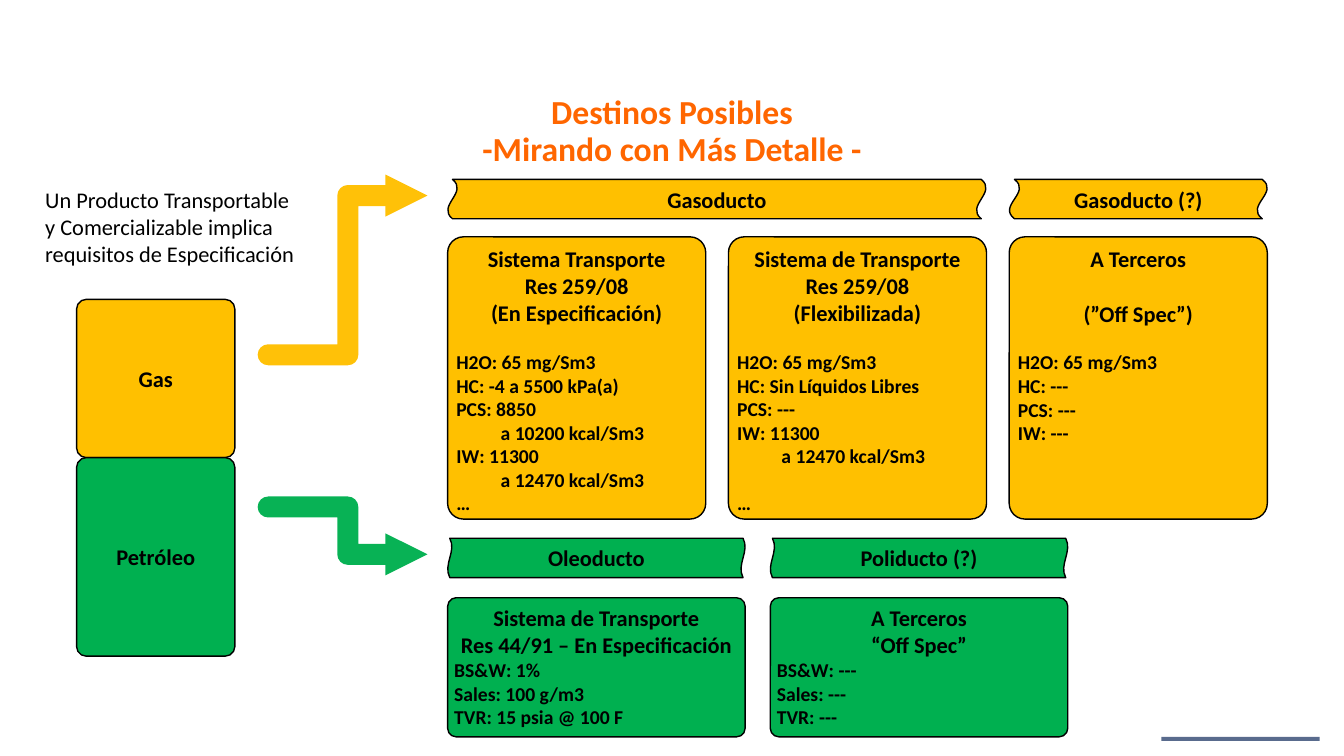
from dataclasses import dataclass
from typing import NamedTuple

from lxml.etree import SubElement as Sub
from pptx import Presentation
from pptx.dml.color import RGBColor as Rgb
from pptx.enum.shapes import MSO_CONNECTOR as Conn, MSO_SHAPE as Kind
from pptx.enum.text import MSO_ANCHOR as Anchor, PP_ALIGN as Align
from pptx.oxml.ns import qn
from pptx.util import Inches, Pt


@dataclass(frozen=True)
class Theme:
    font: str = "Calibri"
    gas: str = "FFC000"
    oil: str = "00B050"
    ink: str = "000000"
    title: str = "FF6600"
    bar: str = "001C50"
    big: int = 24
    head: int = 16
    body: int = 14


class Line(NamedTuple):
    text: str
    gap: float = 0
    indent: float = 0


@dataclass(frozen=True)
class Box:
    x: float
    y: float
    w: float
    h: float
    fill: str
    heads: tuple[Line, ...]
    rows: tuple[Line, ...] = ()


@dataclass(frozen=True)
class Band:
    x: float
    y: float
    w: float
    fill: str
    text: str
    wave: float


@dataclass(frozen=True)
class Arrow:
    y: float
    end: float
    fill: str


theme = Theme()
GAP, TAB, BAND, PAD = 17, 0.44, 0.39, 0.04
GAS_X = [4.44 + 2.785 * i for i in range(3)]
OIL_X = [4.44 + 3.2 * i for i in range(2)]
GAS = (2.35, 2.56, 2.8, theme.gas)
OIL = (5.93, 2.95, 1.38, theme.oil)

BOXES = [
    Box(0.76, 2.97, 1.57, 1.57, theme.gas, (Line("Gas"),)),
    Box(0.76, 4.54, 1.57, 1.97, theme.oil, (Line("Petróleo"),)),
    Box(GAS_X[0], *GAS,
        (Line("Sistema Transporte"), Line("Res 259/08"), Line("(En Especificación)")),
        (Line("H2O: 65 mg/Sm3", GAP), Line("HC: -4 a 5500 kPa(a)"),
         Line("PCS: 8850"), Line("a 10200 kcal/Sm3", indent=TAB),
         Line("IW: 11300"), Line("a 12470 kcal/Sm3", indent=TAB), Line("…"))),
    Box(GAS_X[1], *GAS,
        (Line("Sistema de Transporte"), Line("Res 259/08"), Line("(Flexibilizada)")),
        (Line("H2O: 65 mg/Sm3", GAP), Line("HC: Sin Líquidos Libres"),
         Line("PCS: ---"), Line("IW: 11300"),
         Line("a 12470 kcal/Sm3", indent=TAB), Line("…", GAP))),
    Box(GAS_X[2], *GAS,
        (Line("A Terceros"), Line("(”Off Spec”)", 19.5)),
        (Line("H2O: 65 mg/Sm3", GAP), Line("HC: ---"), Line("PCS: ---"), Line("IW: ---"))),
    Box(OIL_X[0], *OIL,
        (Line("Sistema de Transporte"), Line("Res 44/91 – En Especificación")),
        (Line("BS&W: 1%"), Line("Sales: 100 g/m3"), Line("TVR: 15 psia @ 100 F"))),
    Box(OIL_X[1], *OIL,
        (Line("A Terceros"), Line("“Off Spec”")),
        (Line("BS&W: ---"), Line("Sales: ---"), Line("TVR: ---"))),
]
BANDS = [
    Band(GAS_X[0], 1.78, 5.34, theme.gas, "Gasoducto", 0.009),
    Band(GAS_X[2], 1.78, 2.56, theme.gas, "Gasoducto (?)", 0.02),
    Band(OIL_X[0], 5.34, 2.95, theme.oil, "Oleoducto", 0.007),
    Band(OIL_X[1], 5.34, 2.95, theme.oil, "Poliducto (?)", 0.007),
]
ARROWS = [Arrow(3.52, 1.94, theme.gas), Arrow(5.03, 5.5, theme.oil)]


def style(para, size: int, color: str = theme.ink, bold: bool = True) -> None:
    for run in para.runs:
        run.font.name = theme.font
        run.font.size = Pt(size)
        run.font.bold = bold
        run.font.color.rgb = Rgb.from_string(color)


def fade(fill, share: int) -> None:
    color = next(fill.iter(qn("a:srgbClr")))
    Sub(color, qn("a:alpha"), val=str(share * 1000))


def block(slide, kind, x: float, y: float, w: float, h: float, fill: str):
    shape = slide.shapes.add_shape(kind, Inches(x), Inches(y), Inches(w), Inches(h))
    shape.shadow.inherit = False
    shape.fill.solid()
    shape.fill.fore_color.rgb = Rgb.from_string(fill)
    shape.line.color.rgb = Rgb.from_string(theme.ink)
    shape.line.width = Pt(1)
    frame = shape.text_frame
    frame.word_wrap = True
    frame.margin_left = frame.margin_right = Inches(PAD)
    frame.margin_top = frame.margin_bottom = Inches(PAD)
    frame.vertical_anchor = Anchor.MIDDLE
    return shape


def draw_box(slide, box: Box) -> None:
    shape = block(slide, Kind.ROUNDED_RECTANGLE, box.x, box.y, box.w, box.h, box.fill)
    shape.adjustments[0] = 0.061
    frame = shape.text_frame
    if box.rows:
        frame.vertical_anchor = Anchor.TOP
    lines = box.heads + box.rows
    frame.text = "\n".join(line.text for line in lines)
    for i, (para, line) in enumerate(zip(frame.paragraphs, lines)):
        head = i < len(box.heads)
        para.alignment = Align.CENTER if head else Align.LEFT
        if line.gap:
            para.space_before = Pt(line.gap)
        if line.indent:
            para._p.get_or_add_pPr().set("marL", str(Inches(line.indent)))
        style(para, theme.head if head else theme.body)


def draw_band(slide, band: Band) -> None:
    shift = (band.w - BAND) / 2
    shape = block(slide, Kind.WAVE, band.x + shift, band.y - shift, BAND, band.w, band.fill)
    shape.rotation = 90
    shape.adjustments[0] = band.wave
    shape.adjustments[1] = 0
    frame = shape.text_frame
    frame._txBody.bodyPr.set("vert", "vert270")
    frame.text = band.text
    frame.paragraphs[0].alignment = Align.CENTER
    style(frame.paragraphs[0], theme.head)


def draw_arrow(slide, arrow: Arrow) -> None:
    link = slide.shapes.add_connector(
        Conn.ELBOW, Inches(2.66), Inches(arrow.y), Inches(4.24), Inches(arrow.end))
    link.line.color.rgb = Rgb.from_string(arrow.fill)
    link.line.width = Pt(15)
    props = link._element.spPr
    line = props.find(qn("a:ln"))
    fade(line, 96)
    line.set("cap", "rnd")
    Sub(line, qn("a:round"))
    Sub(line, qn("a:tailEnd"), type="triangle", w="sm", len="sm")
    Sub(props, qn("a:effectLst"))


def draw_text(slide, x: float, y: float, w: float, h: float, text: str):
    frame = slide.shapes.add_textbox(Inches(x), Inches(y), Inches(w), Inches(h)).text_frame
    frame.word_wrap = True
    frame.text = text
    return frame


def main() -> None:
    deck = Presentation()
    deck.slide_width, deck.slide_height = Inches(13.33), Inches(7.5)
    slide = deck.slides.add_slide(deck.slide_layouts[6])

    bar = block(slide, Kind.RECTANGLE, 11.52, 7.31, 1.57, 0.04, theme.bar)
    bar.line.fill.background()
    fade(bar._element.spPr, 65)

    frame = draw_text(slide, 0.76, 0.91, 11.81, 0.79,
                      "Destinos Posibles\v-Mirando con Más Detalle -")
    frame.margin_top = frame.margin_bottom = Inches(PAD)
    title = frame.paragraphs[0]
    title.alignment = Align.CENTER
    title.line_spacing = 0.9
    style(title, theme.big, theme.title)

    for box in BOXES:
        draw_box(slide, box)
    for band in BANDS:
        draw_band(slide, band)
    for arrow in ARROWS:
        draw_arrow(slide, arrow)

    note = draw_text(slide, 0.35, 1.8, 2.68, 0.91,
                     "Un Producto Transportable y Comercializable implica "
                     "requisitos de Especificación")
    style(note.paragraphs[0], theme.head, bold=False)
    deck.save("out.pptx")


if __name__ == "__main__":
    main()
